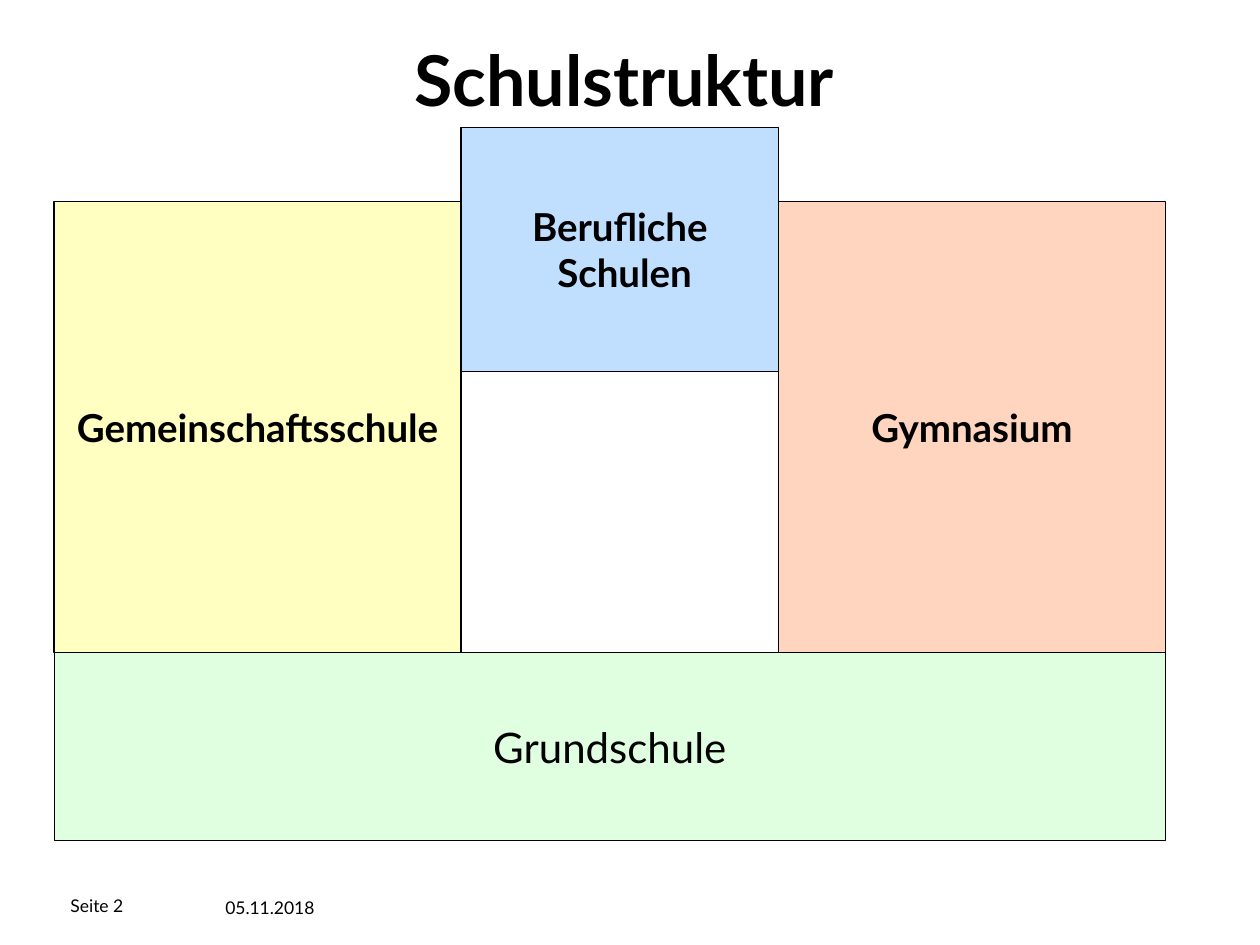
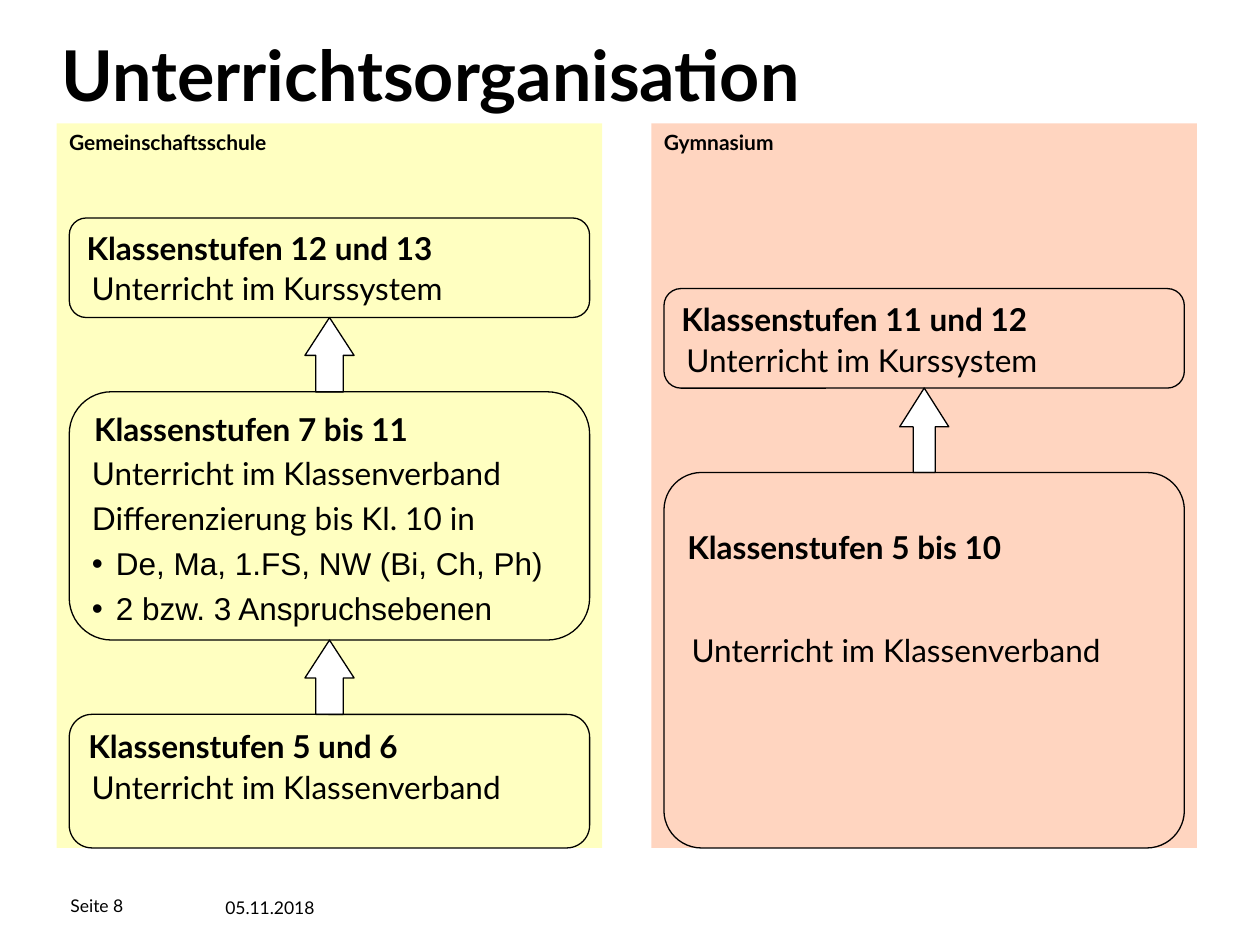
from dataclasses import dataclass
from itertools import pairwise

from lxml import etree
from pptx import Presentation
from pptx.dml.color import RGBColor
from pptx.enum.shapes import MSO_SHAPE
from pptx.enum.text import MSO_ANCHOR, MSO_AUTO_SIZE, PP_ALIGN
from pptx.oxml.ns import qn
from pptx.util import Pt

RECT, ROUNDED, UP_ARROW = MSO_SHAPE.RECTANGLE, MSO_SHAPE.ROUNDED_RECTANGLE, MSO_SHAPE.UP_ARROW
TOP, MIDDLE = MSO_ANCHOR.TOP, MSO_ANCHOR.MIDDLE
LEFT, CENTER = PP_ALIGN.LEFT, PP_ALIGN.CENTER
NO_AUTOFIT = MSO_AUTO_SIZE.NONE
TITLE_ONLY, TITLE_AND_CONTENT = 5, 1
PX = 9144  # 100 px to the inch


@dataclass(frozen=True)
class Theme:
    font: str = "Lato"
    list_font: str = "Arial"
    ink: str = "000000"
    white: str = "FFFFFF"
    yellow: str = "FFFF99"
    orange: str = "FFBA97"
    green: str = "CCFFCC"
    blue: str = "96CAFF"
    opacity: int = 60
    line: float = 0.75
    title: int = 40
    primary: int = 24
    school: int = 22
    body: int = 18
    label: int = 12
    footer: int = 10
    list_pitch: float = 25.7


THEME = Theme()


def write(paragraph, text, size=THEME.body, bold=False, font=THEME.font,
          align=LEFT, spacing=1.0):
    """Put formatted text into a paragraph."""
    paragraph.text = text
    paragraph.alignment = align
    paragraph.line_spacing = spacing
    paragraph.space_before = Pt(0)
    for run in paragraph.runs:
        run.font.name = font
        run.font.size = Pt(size)
        run.font.bold = bold
        run.font.color.rgb = RGBColor.from_string(THEME.ink)


def set_bullet(paragraph, bulleted, indent=19):
    props = paragraph._p.get_or_add_pPr()
    hang = indent * PX if bulleted else 0
    props.set("marL", str(hang))
    props.set("indent", str(-hang))
    if bulleted:
        etree.SubElement(props, qn("a:buChar")).set("char", "•")
    else:
        etree.SubElement(props, qn("a:buNone"))


class Deck:
    def __init__(self, theme):
        self.theme = theme
        self.prs = Presentation()
        self.prs.slide_width, self.prs.slide_height = 1000 * PX, 750 * PX
        self.slide = None

    def new_slide(self, layout, page):
        self.slide = self.prs.slides.add_slide(self.prs.slide_layouts[layout])
        self.text(f"Seite {page}", 56, 707, 126, 24, size=self.theme.footer,
                  inset=0, anchor=MIDDLE)
        self.text("05.11.2018", 169, 707, 126, 24, size=self.theme.footer)

    def place(self, placeholder, x, y, w, h):
        """Move a placeholder and bring it to the front."""
        placeholder.left, placeholder.top = x * PX, y * PX
        placeholder.width, placeholder.height = w * PX, h * PX
        frame = placeholder.text_frame
        frame.auto_size, frame.vertical_anchor = NO_AUTOFIT, TOP
        element = placeholder._element
        element.getparent().append(element)
        return frame

    def title(self, text, x, y, w):
        frame = self.place(self.slide.shapes.title, x, y, w, 78)
        write(frame.paragraphs[0], text, size=self.theme.title, bold=True)

    def list(self, lines, x, y, w, h):
        """Fill the body placeholder with (text, bulleted) lines."""
        frame = self.place(self.slide.placeholders[1], x, y, w, h)
        for i, (text, bulleted) in enumerate(lines):
            paragraph = frame.add_paragraph() if i else frame.paragraphs[0]
            write(paragraph, text, spacing=Pt(self.theme.list_pitch),
                  font=self.theme.list_font if bulleted else self.theme.font)
            set_bullet(paragraph, bulleted)

    def text(self, text, x, y, w, h, inset=None, anchor=TOP, **style):
        box = self.slide.shapes.add_textbox(x * PX, y * PX, w * PX, h * PX)
        frame = box.text_frame
        frame.word_wrap, frame.vertical_anchor = True, anchor
        if inset is not None:
            frame.margin_left = frame.margin_right = inset * PX
            frame.margin_top = frame.margin_bottom = inset * PX
        write(frame.paragraphs[0], text, **style)

    def shape(self, kind, x, y, w, h, fill=None, opacity=100, outlined=True,
              adjust=(), text=None, anchor=MIDDLE, margin_top=5, **style):
        shape = self.slide.shapes.add_shape(kind, x * PX, y * PX, w * PX, h * PX)
        shape.shadow.inherit = False
        for i, value in enumerate(adjust):
            shape.adjustments[i] = value
        if fill:
            shape.fill.solid()
            shape.fill.fore_color.rgb = RGBColor.from_string(fill)
            if opacity < 100:
                color = shape._element.spPr.find(qn("a:solidFill"))[0]
                etree.SubElement(color, qn("a:alpha")).set("val", str(opacity * 1000))
        else:
            shape.fill.background()
        if outlined:
            shape.line.color.rgb = RGBColor.from_string(self.theme.ink)
            shape.line.width = Pt(self.theme.line)
        else:
            shape.line.fill.background()
        if text:
            frame = shape.text_frame
            frame.word_wrap, frame.vertical_anchor = True, anchor
            frame.margin_top = margin_top * PX
            write(frame.paragraphs[0], text, **style)

    def block(self, x, y, w, h, fill, **options):
        self.shape(RECT, x, y, w, h, fill=fill, opacity=self.theme.opacity, **options)


def build_school_structure(deck):
    theme = deck.theme
    deck.new_slide(TITLE_ONLY, 2)
    deck.title("Schulstruktur", 319, 24, 380)

    # Primary school as the base
    deck.block(43, 518, 882, 149, theme.green, text="Grundschule",
               size=theme.primary, align=CENTER)

    # Secondary schools on top of it
    schools = [
        ("Gymnasium", 618, 160, 307, 358, theme.orange),
        ("Gemeinschaftsschule", 43, 160, 323, 358, theme.yellow),
        ("Berufliche\n Schulen", 366, 101, 252, 194, theme.blue),
    ]
    for name, x, y, w, h, fill in schools:
        deck.block(x, y, w, h, fill, text=name, size=theme.school,
                   bold=True, align=CENTER)


def build_lesson_organisation(deck):
    theme = deck.theme
    deck.new_slide(TITLE_AND_CONTENT, 8)
    deck.title("Unterrichtsorganisation", 39, 20, 644)
    course, class_group = "Unterricht im Kurssystem", "Unterricht im Klassenverband"

    # Stage: heading, top, height, corner, heading margin, note, note x, note y
    columns = [
        ("Gemeinschaftsschule", 45, theme.yellow, (0.56, 0.77), [
            ("Klassenstufen 12 und 13", 173, 79, 0.17, 5, course, 18, 212),
            ("Klassenstufen 7 bis 11", 311, 197, 0.17, 5, None, 0, 0),
            ("Klassenstufen 5 und 6", 567, 106, 0.17, 5, class_group, 18, 608),
        ]),
        ("Gymnasium", 517, theme.orange, (0.45, 0.79), [
            ("Klassenstufen 11 und 12", 229, 79, 0.17, 5, course, 18, 269),
            ("Klassenstufen 5 bis 10", 375, 298, 0.1, 35, class_group, 22, 499),
        ]),
    ]
    for school, x, fill, arrow_form, stages in columns:
        deck.block(x, 98, 433, 575, fill, outlined=False)
        deck.text(school, x, 98, 250, 30, size=theme.label, bold=True)

        # Arrows fill the gaps between stages
        for upper, lower in pairwise(stages):
            gap_top = upper[1] + upper[2]
            deck.shape(UP_ARROW, x + 197, gap_top, 39, lower[1] - gap_top,
                       fill=theme.white, adjust=arrow_form)

        for heading, y, h, corner, margin, note, note_x, note_y in stages:
            deck.shape(ROUNDED, x + 10, y, 413, h, adjust=(corner,), text=heading,
                       anchor=TOP, margin_top=margin, bold=True)
            if note:
                deck.text(note, x + note_x, note_y, 374, 37, spacing=0.9)

    # Details of the middle stage
    deck.list([
        (class_group, False),
        ("Differenzierung bis Kl. 10 in", False),
        ("De, Ma, 1.FS, NW (Bi, Ch, Ph)", True),
        ("2 bzw. 3 Anspruchsebenen", True),
    ], 63, 350, 400, 155)


def main():
    deck = Deck(THEME)
    build_school_structure(deck)
    build_lesson_organisation(deck)
    deck.prs.save("out.pptx")


if __name__ == "__main__":
    main()
